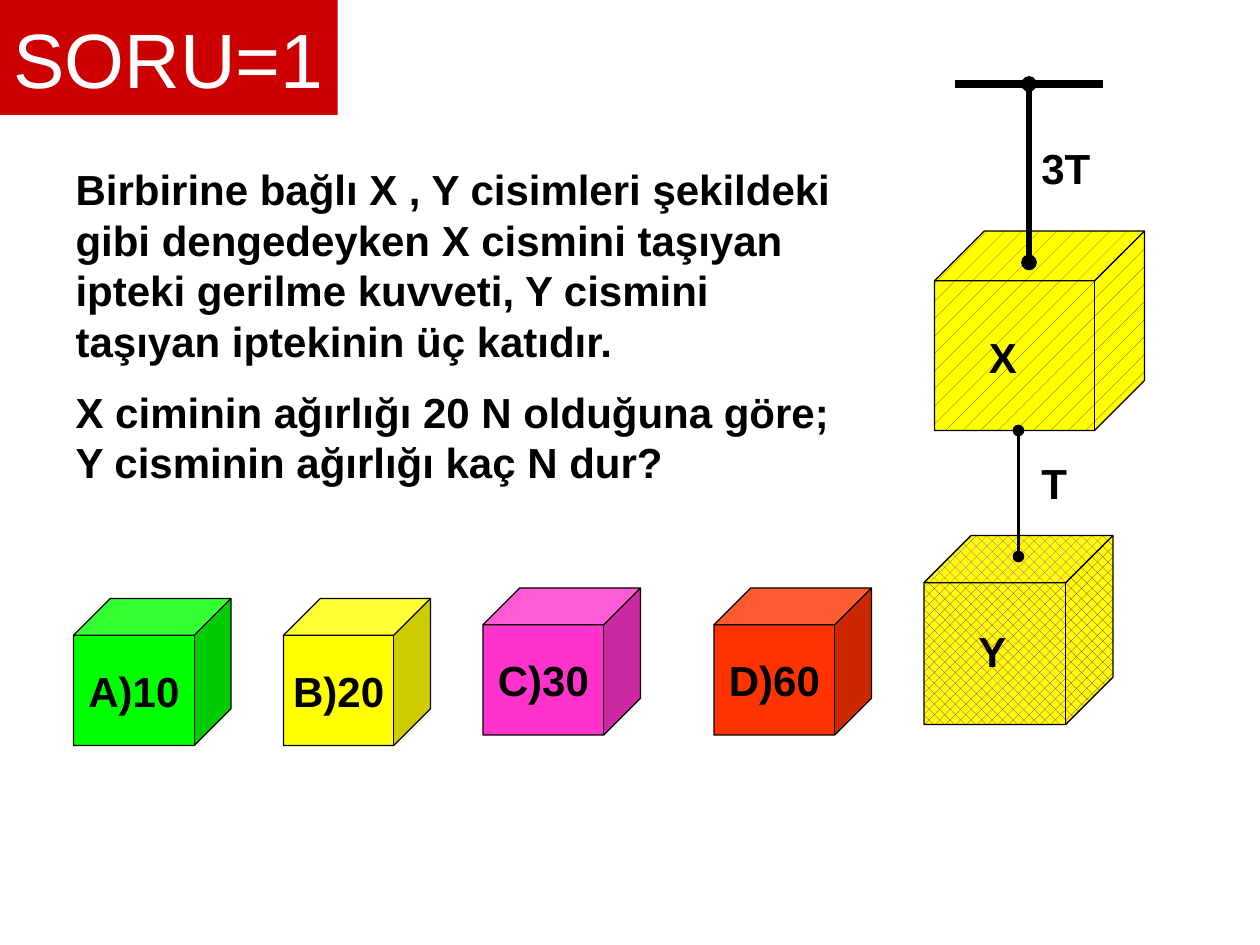
"""Build a physics question slide about two hanging blocks and four answer cubes."""
from lxml import etree
from pptx import Presentation
from pptx.dml.color import RGBColor
from pptx.enum.dml import MSO_PATTERN
from pptx.enum.shapes import MSO_CONNECTOR, MSO_SHAPE
from pptx.enum.text import MSO_ANCHOR, MSO_AUTO_SIZE, PP_ALIGN
from pptx.oxml.ns import qn
from pptx.util import Inches, Pt

CUBE, STRAIGHT = MSO_SHAPE.CUBE, MSO_CONNECTOR.STRAIGHT
DOTS, WEAVE = MSO_PATTERN.PERCENT_5, MSO_PATTERN.WEAVE
LEFT, CENTER = PP_ALIGN.LEFT, PP_ALIGN.CENTER
TOP, MIDDLE = MSO_ANCHOR.TOP, MSO_ANCHOR.MIDDLE
NO_FIT = MSO_AUTO_SIZE.NONE

COLORS = {
    "ink": "000000", "paper": "FFFFFF", "banner": "CC0000",
    "block": "FFFF00", "dots": "A12417", "weave": "9900CC",
    "green": "00FF00", "yellow": "FFFF00", "pink": "FF33CC", "orange": "FF3300",
}
RGB = {role: RGBColor.from_string(value) for role, value in COLORS.items()}
CELL = Inches(1) / 12


def grid(*cells):
    return [round(cell * CELL) for cell in cells]


def write(holder, *paragraphs, size=24, bold=True, color="ink", align=LEFT, anchor=TOP, wrap=True):
    frame = holder.text_frame
    frame.text = "\n".join(paragraphs)
    frame.auto_size = NO_FIT
    frame.word_wrap = wrap
    frame.vertical_anchor = anchor
    for index, paragraph in enumerate(frame.paragraphs):
        paragraph.alignment = align
        paragraph.space_before = Pt(12 if index else 0)
        font = paragraph.runs[0].font
        font.name, font.size, font.bold = "Arial", Pt(size), bold
        font.color.rgb = RGB[color]


deck = Presentation()
deck.slide_width, deck.slide_height = grid(120, 90)
slide = deck.slides.add_slide(deck.slide_layouts[1])
shapes = slide.shapes

heading = shapes.title
heading.left, heading.top, heading.width, heading.height = grid(0, 0, 32.15, 10.95)
heading.fill.solid()
heading.fill.fore_color.rgb = RGB["banner"]
write(heading, "SORU=1", size=44, bold=False, color="paper", align=CENTER, anchor=MIDDLE, wrap=False)

question = slide.placeholders[1]
question.left, question.top, question.width, question.height = grid(6, 15, 75, 32.4)
write(
    question,
    "Birbirine bağlı X , Y cisimleri şekildeki gibi dengedeyken X cismini taşıyan "
    "ipteki gerilme kuvveti, Y cismini taşıyan iptekinin üç katıdır.",
    "X ciminin ağırlığı 20 N olduğuna göre; Y cisminin ağırlığı kaç N dur?",
)
for paragraph in question.text_frame.paragraphs:
    properties = paragraph._p.get_or_add_pPr()
    properties.set("marL", "0")
    properties.set("indent", "0")
    etree.SubElement(properties, qn("a:buNone"))

cubes = [
    (89, 22, 20, 19, "block", DOTS, "dots", None),
    (88, 51, 18, 18, "block", WEAVE, "weave", None),
    (7, 57, 15, 14, "green", None, None, "A)10"),
    (27, 57, 14, 14, "yellow", None, None, "B)20"),
    (46, 56, 15, 14, "pink", None, None, "C)30"),
    (68, 56, 15, 14, "orange", None, None, "D)60"),
]
for left, top, width, height, color, pattern, hatch, answer in cubes:
    cube = shapes.add_shape(CUBE, *grid(left, top, width, height))
    cube.shadow.inherit = False
    cube.line.color.rgb = RGB["ink"]
    cube.line.width = Pt(0.75)
    if pattern:
        cube.fill.patterned()
        cube.fill.pattern = pattern
        cube.fill.fore_color.rgb = RGB[hatch]
        cube.fill.back_color.rgb = RGB[color]
    else:
        cube.fill.solid()
        cube.fill.fore_color.rgb = RGB[color]
        write(cube, answer, align=CENTER, anchor=MIDDLE, wrap=False)

ceiling = (91, 8, 105, 8, 4.5, False)
upper_rope = (98, 8, 98, 25, 3, True)
lower_rope = (97, 41, 97, 53, 2.25, True)
for x1, y1, x2, y2, weight, knotted in (ceiling, upper_rope, lower_rope):
    rope = shapes.add_connector(STRAIGHT, *grid(x1, y1, x2, y2))
    rope.line.color.rgb = RGB["ink"]
    rope.line.width = Pt(weight)
    if knotted:
        for end in ("a:headEnd", "a:tailEnd"):
            etree.SubElement(rope.line._get_or_add_ln(), qn(end), type="oval")
    etree.SubElement(rope._element.spPr, qn("a:effectLst"))

for name, left, top, width in (("3T", 98, 13, 8), ("T", 98, 43, 8), ("X", 93, 31, 8), ("Y", 92, 59, 5)):
    write(shapes.add_textbox(*grid(left, top, width, 6)), name)

deck.save("out.pptx")
